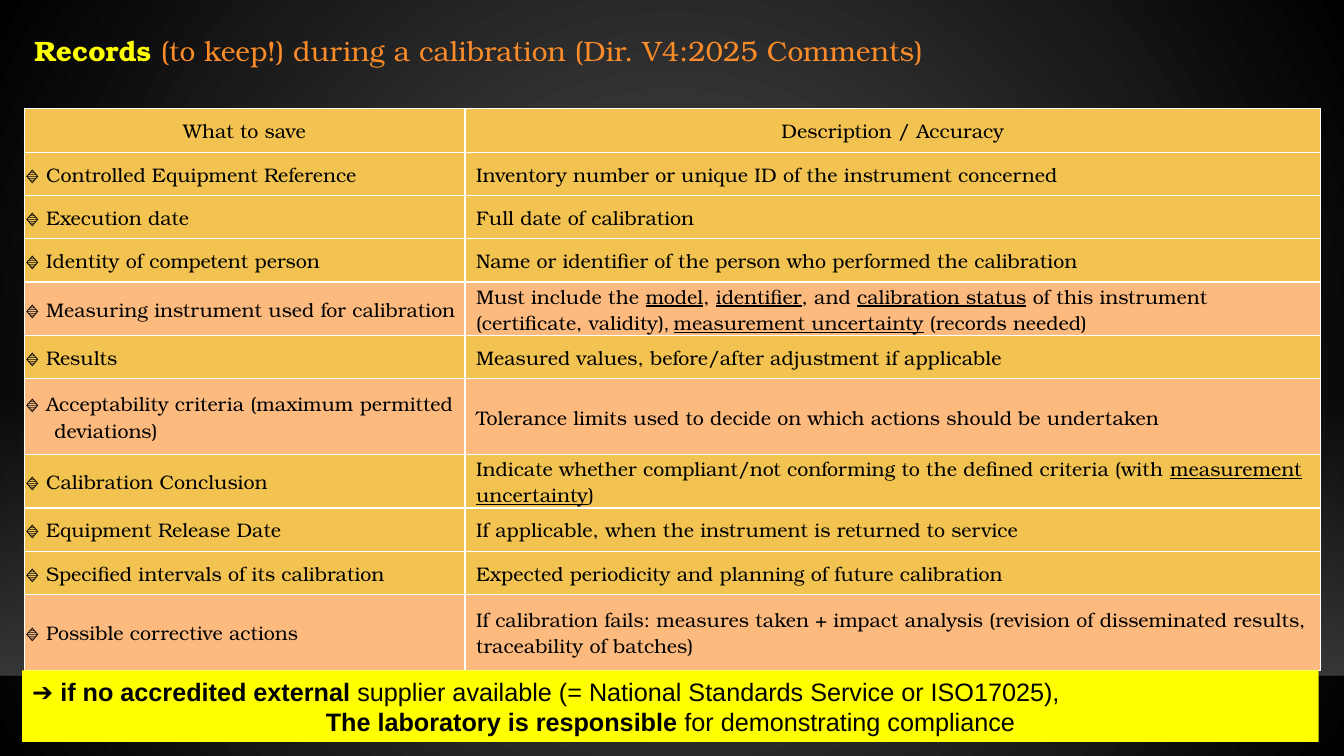
from dataclasses import dataclass

from lxml.etree import SubElement
from pptx import Presentation
from pptx.dml.color import RGBColor
from pptx.enum.shapes import MSO_CONNECTOR, MSO_SHAPE
from pptx.enum.text import MSO_ANCHOR as Anchor, PP_ALIGN as Align
from pptx.oxml.ns import qn
from pptx.util import Inches, Pt


@dataclass(frozen=True)
class Theme:
    """Colours, fonts and type sizes of the slide."""
    glow: str = "505050"
    dark: str = "000000"
    floor: str = "454545"
    horizon: str = "000001"
    highlight: str = "FFFF00"
    heading: str = "FB8C29"
    row: str = "F2C351"
    key_row: str = "FDBA7F"
    grid: str = "FFFFFF"
    serif: str = "TeX Gyre Bonum"
    comma: str = "Calibri"
    sans: str = "Arial"
    title_size: int = 20
    table_size: int = 14
    band_size: int = 18


THEME = Theme()
WIDTH, HEIGHT = Inches(13.33), Inches(7.5)
HEADER = ("What to save", "Description / Accuracy")
UNDERLINED, COMMA = "underlined", "comma"
RECORDS = [
    ("Controlled Equipment Reference", ["Inventory number or unique ID of the instrument concerned"], 1, False),
    ("Execution date", ["Full date of calibration"], 1, False),
    ("Identity of competent person", ["Name or identifier of the person who performed the calibration"], 1, False),
    ("Measuring instrument used for calibration",
     ["Must include the ", ("model", UNDERLINED), ", ", ("identifier", UNDERLINED), ", and ",
      ("calibration status", UNDERLINED), " of this instrument (certificate, validity)", (", ", COMMA),
      ("measurement uncertainty", UNDERLINED), " (records needed)"], 1, True),
    ("Results", ["Measured values, before/after adjustment if applicable"], 1, False),
    ("Acceptability criteria (maximum permitted deviations)",
     ["Tolerance limits used to decide on which actions should be undertaken"], 1.75, True),
    ("Calibration Conclusion",
     ["Indicate whether compliant/not conforming to the defined criteria (with ",
      ("measurement uncertainty", UNDERLINED), ")"], 1, False),
    ("Equipment Release Date", ["If applicable, when the instrument is returned to service"], 1, False),
    ("Specified intervals of its calibration", ["Expected periodicity and planning of future calibration"], 1, False),
    ("Possible corrective actions",
     ["If calibration fails: measures taken + impact analysis (revision of disseminated results, "
      "traceability of batches)"], 1.75, True),
]


def box(left, top, width, height):
    """Turn percentages of the slide into a position and size."""
    return (int(WIDTH * left / 100), int(HEIGHT * top / 100),
            int(WIDTH * width / 100), int(HEIGHT * height / 100))


def add_run(paragraph, text, font, size, color, bold=False, underline=False):
    """Append one formatted run."""
    run = paragraph.add_run()
    run.text = text
    run.font.name, run.font.size = font, Pt(size)
    run.font.color.rgb = RGBColor.from_string(color)
    run.font.bold, run.font.underline = bold, underline


def set_opacity(color, percent):
    """Give a colour element an opacity."""
    SubElement(color, qn("a:alpha"), val=str(percent * 1000))


def set_gradient(fill, *colors):
    """Make a two-stop gradient running downwards."""
    fill.gradient()
    fill.gradient_angle = 270
    for stop, position, color in zip(fill.gradient_stops, (0, 1), colors):
        stop.position = position
        stop.color.rgb = RGBColor.from_string(color)


def paint_background(slide):
    """Fill the slide with a glow fading outwards."""
    set_gradient(slide.background.fill, THEME.glow, THEME.dark)
    linear = next(slide.element.iter(qn("a:lin")))
    gradient = linear.getparent()
    gradient.remove(linear)
    circle = SubElement(gradient, qn("a:path"), path="circle")
    SubElement(circle, qn("a:fillToRect"), l="50000", t="50000", r="50000", b="50000")


def add_floor(slide, area):
    """Draw the fading floor and the horizon line at its foot."""
    left, top, width, height = area
    floor = slide.shapes.add_shape(MSO_SHAPE.RECTANGLE, *area)
    floor.shadow.inherit = False
    floor.line.fill.background()
    set_gradient(floor.fill, THEME.floor, THEME.floor)
    for color, opacity in zip(floor.element.spPr.iter(qn("a:srgbClr")), (0, 80)):
        set_opacity(color, opacity)
    foot = top + height
    horizon = slide.shapes.add_connector(MSO_CONNECTOR.STRAIGHT, left, foot, left + width, foot)
    horizon.line.width = Pt(1)
    horizon.line.color.rgb = RGBColor.from_string(THEME.horizon)
    properties = horizon.element.spPr
    set_opacity(next(properties.iter(qn("a:srgbClr"))), 20)
    SubElement(properties, qn("a:effectLst"))


def add_title(slide, area):
    """Place the heading in the title placeholder."""
    title = slide.shapes.title
    title.left, title.top, title.width, title.height = area
    frame = title.text_frame
    frame.vertical_anchor = Anchor.MIDDLE
    heading = frame.paragraphs[0]
    heading.alignment = Align.LEFT
    add_run(heading, "Records ", THEME.serif, THEME.title_size, THEME.highlight, bold=True)
    add_run(heading, "(to keep!) during a calibration (Dir. V4:2025 Comments)",
            THEME.serif, THEME.title_size, THEME.heading)


def fill_cell(cell, pieces, color, alignment=Align.LEFT, margin=0, indent=0):
    """Format one table cell with its borders, fill and runs."""
    cell.vertical_anchor = Anchor.MIDDLE
    cell.margin_left = cell.margin_right = cell.margin_top = Inches(0.01)
    cell.margin_bottom = 0
    properties = cell._tc.get_or_add_tcPr()
    for side in ("a:lnL", "a:lnR", "a:lnT", "a:lnB"):
        border = SubElement(properties, qn(side), w=str(Pt(1)))
        SubElement(SubElement(border, qn("a:solidFill")), qn("a:srgbClr"), val=THEME.grid)
    cell.fill.solid()
    cell.fill.fore_color.rgb = RGBColor.from_string(color)
    paragraph = cell.text_frame.paragraphs[0]
    paragraph.alignment = alignment
    layout = paragraph._p.get_or_add_pPr()
    layout.set("marL", str(Inches(margin)))
    layout.set("indent", str(Inches(indent)))
    for piece in pieces:
        text, style = (piece, None) if isinstance(piece, str) else piece
        add_run(paragraph, text, THEME.comma if style == COMMA else THEME.serif,
                THEME.table_size, THEME.dark, underline=style == UNDERLINED)


def add_records(slide, area):
    """Build the table of records inside the given box."""
    width, height = area[2:]
    table = slide.shapes.add_table(len(RECORDS) + 1, len(HEADER), *area).table
    table.first_row = table.horz_banding = False
    for column, share in zip(table.columns, (0.34, 0.66)):
        column.width = int(width * share)
    units = [1] + [record[2] for record in RECORDS]
    for row, unit in zip(table.rows, units):
        row.height = int(height * unit / sum(units))
    for column, label in enumerate(HEADER):
        fill_cell(table.cell(0, column), [label], THEME.row, Align.CENTER)
    for row, (item, description, _, is_key) in enumerate(RECORDS, 1):
        color = THEME.key_row if is_key else THEME.row
        fill_cell(table.cell(row, 0), ["🔹 " + item], color, margin=0.29, indent=-0.29)
        fill_cell(table.cell(row, 1), description, color, margin=0.1)


def add_responsibility(slide, area):
    """Draw the closing band with its two statements."""
    band = slide.shapes.add_shape(MSO_SHAPE.RECTANGLE, *area)
    band.shadow.inherit = False
    band.line.fill.background()
    band.fill.solid()
    band.fill.fore_color.rgb = RGBColor.from_string(THEME.highlight)
    frame = band.text_frame
    frame.word_wrap = True
    frame.vertical_anchor = Anchor.MIDDLE
    condition, duty = frame.paragraphs[0], frame.add_paragraph()
    condition.alignment, duty.alignment = Align.LEFT, Align.CENTER
    for statement, text, bold in (
            (condition, "➔ ", False),
            (condition, "if no accredited external ", True),
            (condition, "supplier available (= National Standards Service or ISO17025),", False),
            (duty, "The laboratory is responsible ", True),
            (duty, "for demonstrating compliance", False)):
        add_run(statement, text, THEME.sans, THEME.band_size, THEME.dark, bold)


def main():
    """Build and save the slide."""
    deck = Presentation()
    deck.slide_width, deck.slide_height = WIDTH, HEIGHT
    slide = deck.slides.add_slide(deck.slide_layouts[5])
    paint_background(slide)
    add_floor(slide, box(0, 52.8, 100, 36.6))
    add_title(slide, box(1.8, 2.67, 96.47, 8))
    add_records(slide, box(1.8, 14.4, 96.47, 71.6))
    add_responsibility(slide, box(1.65, 88.67, 96.47, 9.47))
    deck.save("out.pptx")


if __name__ == "__main__":
    main()
